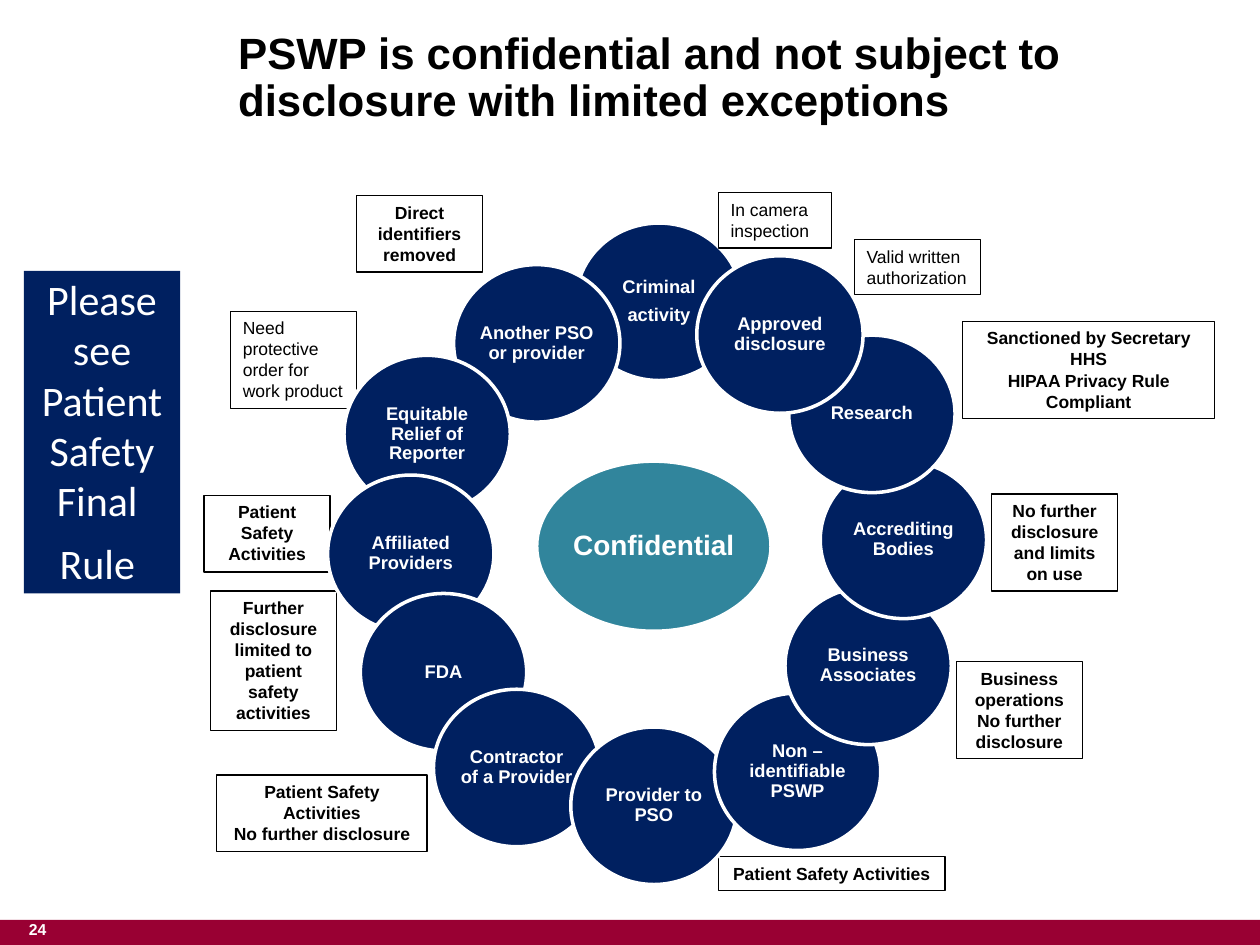
from pptx import Presentation
from pptx import util as u
from pptx.dml.color import RGBColor
from pptx.enum import shapes, text

NAVY = RGBColor(0x00, 0x20, 0x60)
TEAL = RGBColor(0x31, 0x85, 0x9C)
MAROON = RGBColor(0x99, 0x00, 0x33)
WHITE = RGBColor(0xFF, 0xFF, 0xFF)
BLACK = RGBColor(0x00, 0x00, 0x00)

CIRCLE_SIZE = (1.32, 1.25)
LEFT, CENTER = text.PP_ALIGN.LEFT, text.PP_ALIGN.CENTER

CRIMINAL = ("Criminal\nactivity", 4.57, 1.77)
EXCEPTIONS = [
    ("Another PSO or provider", 3.6, 2.1),
    ("Equitable Relief of Reporter", 2.73, 2.82),
    ("Affiliated Providers", 2.6, 3.77),
    ("FDA", 2.86, 4.71),
    ("Contractor of a Provider", 3.44, 5.47),
    ("Provider to PSO", 4.53, 5.77),
    ("Non –identifiable PSWP", 5.67, 5.5),
    ("Business Associates", 6.23, 4.66),
    ("Accrediting Bodies", 6.51, 3.66),
    ("Research", 6.26, 2.66),
    ("Approved disclosure", 5.53, 2.03),
]
PLAIN_NOTES = [
    ("In camera inspection", 5.7, 1.53, 0.9, 0.44),
    ("Valid written authorization", 6.78, 1.9, 1, 0.44),
    ("Need protective order for work product", 1.83, 2.47, 1, 0.77),
]
BOLD_NOTES = [
    ("Patient Safety Activities", 5.7, 6.8, 1.8, 0.27),
    ("Direct identifiers removed", 2.83, 1.55, 1, 0.61),
    ("Patient Safety Activities\nNo further disclosure", 1.72, 6.15, 1.67, 0.61),
    ("Patient Safety Activities", 1.62, 3.93, 1, 0.61),
    ("Sanctioned by Secretary HHS\nHIPAA Privacy Rule Compliant", 7.64, 2.55, 2, 0.77),
    ("Further disclosure limited to patient safety activities", 1.67, 4.69, 1, 1.11),
    ("No further disclosure and limits on use", 7.87, 3.92, 1, 0.77),
    ("Business operations\nNo further disclosure", 7.59, 5.25, 1, 0.77),
]


def write(sp, content, size, color, bold=True, font="Arial", align=CENTER,
          anchor=text.MSO_ANCHOR.MIDDLE, inset=(0.1, 0.05), spacing=None, after=0, before=0):
    tf = sp.text_frame
    tf.text = content
    tf.word_wrap = True
    tf.auto_size = text.MSO_AUTO_SIZE.NONE
    tf.vertical_anchor = anchor
    tf.margin_left = tf.margin_right = u.Inches(inset[0])
    tf.margin_top = tf.margin_bottom = u.Inches(inset[1])
    for i, p in enumerate(tf.paragraphs):
        p.alignment = align
        p.line_spacing = spacing
        p.space_before = u.Pt(before if i else 0)
        p.space_after = u.Pt(after)
        for r in p.runs:
            r.font.name = font
            r.font.size = u.Pt(size)
            r.font.bold = bold
            r.font.color.rgb = color


def add_box(s, kind, x, y, w, h, fill=None, line=None, width=0.75):
    sp = s.shapes.add_shape(kind, u.Inches(x), u.Inches(y), u.Inches(w), u.Inches(h))
    sp.shadow.inherit = False
    if fill is None:
        sp.fill.background()
    else:
        sp.fill.solid()
        sp.fill.fore_color.rgb = fill
    if line is None:
        sp.line.fill.background()
    else:
        sp.line.color.rgb = line
        sp.line.width = u.Pt(width)
    return sp


def add_oval(s, content, x, y, w, h, fill=NAVY, size=10.5):
    sp = add_box(s, shapes.MSO_SHAPE.OVAL, x, y, w, h, fill, WHITE, 2)
    write(sp, content, size, WHITE, inset=(0.01, 0.01), spacing=0.9, after=4.5)


def add_note(s, content, x, y, w, h, bold, align):
    sp = add_box(s, shapes.MSO_SHAPE.RECTANGLE, x, y, w, h, line=BLACK)
    write(sp, content, 10, BLACK, bold, align=align, anchor=text.MSO_ANCHOR.TOP)


def add_title(s):
    sp = s.shapes.title
    sp.left, sp.top = u.Inches(1.79), u.Inches(0.12)
    sp.width, sp.height = u.Inches(8.14), u.Inches(1.01)
    write(sp, "PSWP is confidential and not subject to disclosure with limited exceptions",
          25, BLACK, align=LEFT, spacing=0.9)


def add_footer(s):
    add_box(s, shapes.MSO_SHAPE.RECTANGLE, 0, 7.3, 10, 0.2, MAROON)
    sp = s.shapes.add_textbox(u.Inches(0.13), u.Inches(7.25), u.Inches(0.91), u.Inches(0.25))
    write(sp, "24", 9, WHITE, align=LEFT, anchor=text.MSO_ANCHOR.TOP)


def add_rule_panel(s):
    sp = add_box(s, shapes.MSO_SHAPE.RECTANGLE, 0.19, 2.15, 1.24, 2.56, NAVY)
    write(sp, "Please see Patient Safety Final \nRule ", 24, WHITE, False, "Calibri",
          anchor=text.MSO_ANCHOR.TOP, inset=(0.02, 0.02), after=4, before=3)


def main():
    prs = Presentation()
    prs.slide_width, prs.slide_height = u.Inches(10), u.Inches(7.5)
    s = prs.slides.add_slide(prs.slide_layouts[5])
    add_footer(s)
    add_title(s)
    add_oval(s, *CRIMINAL, *CIRCLE_SIZE)
    for note in PLAIN_NOTES:
        add_note(s, *note, False, LEFT)
    for note in BOLD_NOTES:
        add_note(s, *note, True, CENTER)
    add_oval(s, "Confidential", 4.26, 3.66, 1.86, 1.35, TEAL, 16)
    add_rule_panel(s)
    for exception in EXCEPTIONS:
        add_oval(s, *exception, *CIRCLE_SIZE)
    prs.save("out.pptx")


if __name__ == "__main__":
    main()
